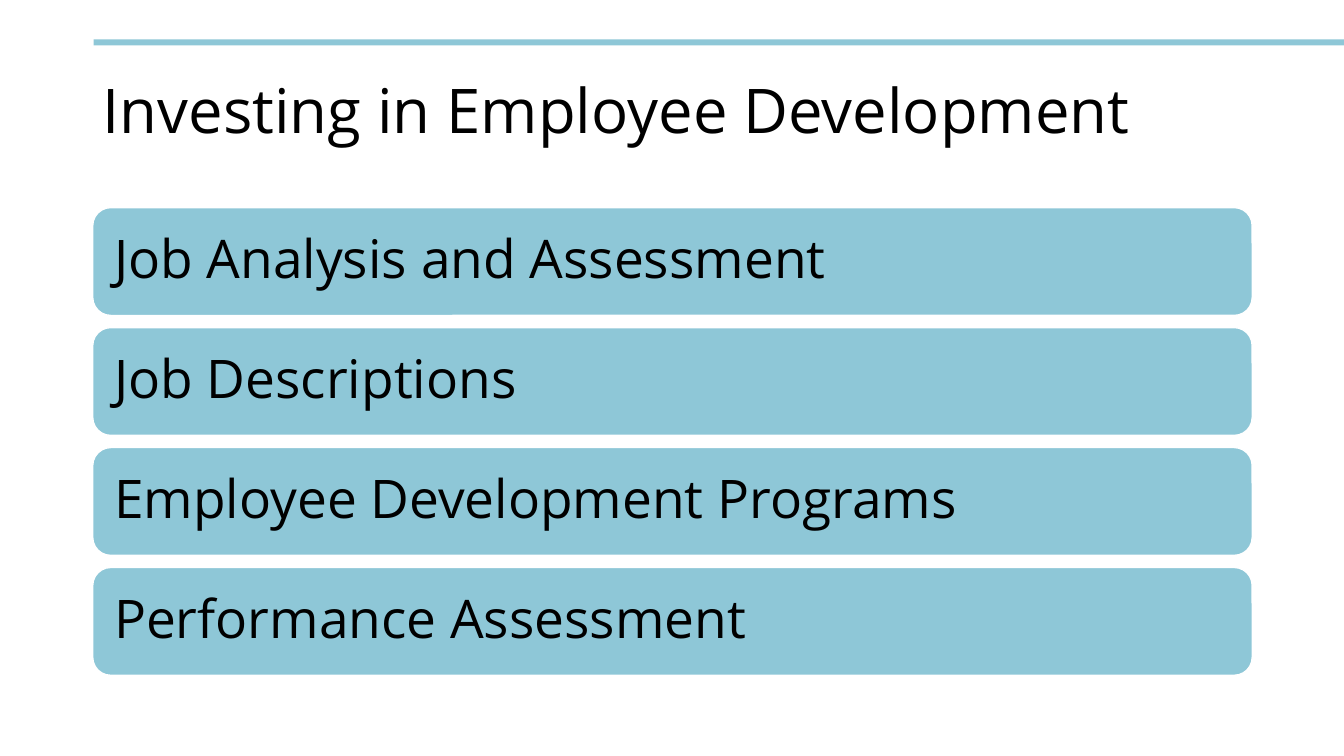
from pptx import Presentation
from pptx.dml.color import RGBColor
from pptx.enum.shapes import MSO_SHAPE
from pptx.enum.text import MSO_ANCHOR, MSO_AUTO_SIZE, PP_ALIGN
from pptx.util import Inches, Pt

FONT = "Open Sans"
BLUE = "8EC7D7"
WHITE = "FFFFFF"
BLACK = "000000"
LEFT, WIDTH = 0.92, 11.5
FIRST_ROW, ROW_STEP, ROW_HEIGHT = 2.06, 1.19, 1.07
TOPICS = [
    "Job Analysis and Assessment",
    "Job Descriptions",
    "Employee Development Programs",
    "Performance Assessment",
]


def color(value):
    return RGBColor.from_string(value)


def write(shape, text, size):
    frame = shape.text_frame
    frame.word_wrap = True
    frame.auto_size = MSO_AUTO_SIZE.NONE
    frame.vertical_anchor = MSO_ANCHOR.MIDDLE
    para = frame.paragraphs[0]
    para.alignment = PP_ALIGN.LEFT
    para.line_spacing = 0.9
    span = para.add_run()
    span.text = text
    span.font.name = FONT
    span.font.size = Pt(size)
    span.font.color.rgb = color(BLACK)
    return frame


deck = Presentation()
deck.slide_width, deck.slide_height = Inches(13.33), Inches(7.5)
page = deck.slides.add_slide(deck.slide_layouts[5])
page.background.fill.solid()
page.background.fill.fore_color.rgb = color(WHITE)

title = page.shapes.title
title.left, title.top = Inches(LEFT), Inches(0.4)
title.width, title.height = Inches(WIDTH), Inches(1.45)
write(title, "Investing in Employee Development", 44)

rule = page.shapes.add_shape(
    MSO_SHAPE.RECTANGLE, Inches(0.93), Inches(0.39), Inches(12.4), Inches(0.06)
)
rule.shadow.inherit = False
rule.fill.solid()
rule.fill.fore_color.rgb = color(BLUE)
rule.line.fill.background()

for row, topic in enumerate(TOPICS):
    box = page.shapes.add_shape(
        MSO_SHAPE.ROUNDED_RECTANGLE,
        Inches(LEFT), Inches(FIRST_ROW + row * ROW_STEP),
        Inches(WIDTH), Inches(ROW_HEIGHT),
    )
    box.shadow.inherit = False
    box.fill.solid()
    box.fill.fore_color.rgb = color(BLUE)
    box.line.color.rgb = color(WHITE)
    box.line.width = Pt(1)
    frame = write(box, topic, 38)
    frame.margin_left = frame.margin_right = Inches(0.16)
    frame.margin_top = frame.margin_bottom = Inches(0.16)

deck.save("out.pptx")
